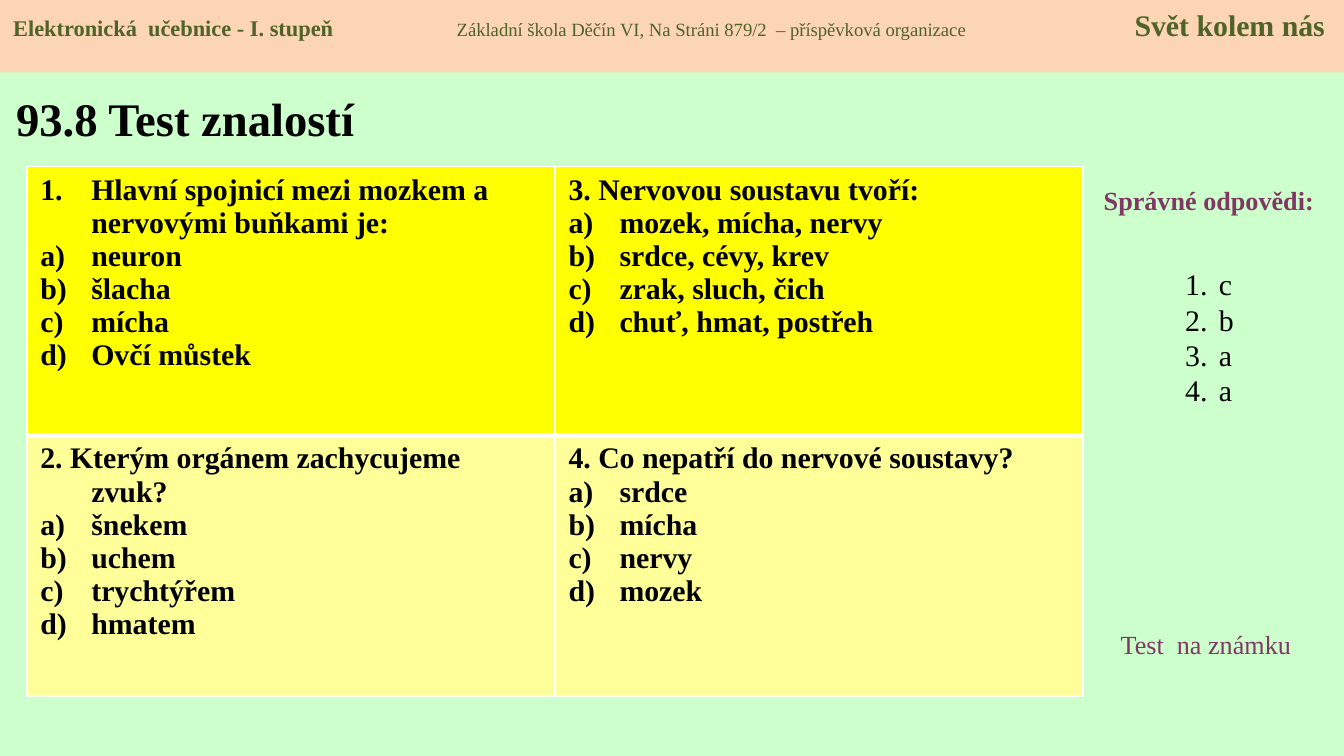
from lxml.etree import SubElement
from pptx import Presentation
from pptx.dml.color import RGBColor
from pptx.enum.shapes import MSO_SHAPE as Shape
from pptx.enum.text import MSO_ANCHOR as Anchor, MSO_AUTO_SIZE as AutoSize, PP_ALIGN as Align
from pptx.oxml.ns import qn
from pptx.util import Inches, Pt

COLORS = {
    "background": "CCFFCC", "banner": "FCD5B5", "green": "4F6228",
    "plum": "813763", "black": "000000", "border": "FFFFFF",
    "top_row": "FFFF00", "bottom_row": "FFFF99",
}


def add_run(paragraph, text, size, color, bold=False):
    run = paragraph.add_run()
    run.text = text
    run.font.name = "Times New Roman"
    run.font.size = Pt(size)
    run.font.bold = bold
    run.font.color.rgb = RGBColor.from_string(COLORS[color])


def indent(paragraph, hang, numbering=None):
    props = paragraph._p.get_or_add_pPr()
    props.set("marL", str(Inches(hang)))
    props.set("indent", str(-Inches(hang)))
    if numbering:
        SubElement(props, qn("a:buFont"), typeface="+mj-lt")
        SubElement(props, qn("a:buAutoNum"), type=numbering)


# 16:9 slide
prs = Presentation()
prs.slide_width, prs.slide_height = Inches(10), Inches(10 * 9 / 16)
slide = prs.slides.add_slide(prs.slide_layouts[5])
slide.background.fill.solid()
slide.background.fill.fore_color.rgb = RGBColor.from_string(COLORS["background"])

# Title
title = slide.shapes.title
title.left, title.top, title.width, title.height = map(Inches, (0.02, 0.55, 3.19, 0.65))
title.text_frame.vertical_anchor = Anchor.MIDDLE
title.text_frame.paragraphs[0].alignment = Align.LEFT
add_run(title.text_frame.paragraphs[0], "93.8 Test znalostí", 25, "black", True)

# Banner: three texts on one line, spaced with tab stops
banner = slide.shapes.add_shape(Shape.RECTANGLE, 0, 0, prs.slide_width, Inches(0.54))
banner.shadow.inherit = False
banner.fill.solid()
banner.fill.fore_color.rgb = RGBColor.from_string(COLORS["banner"])
banner.line.fill.background()
banner.text_frame.vertical_anchor = Anchor.TOP
banner_line = banner.text_frame.paragraphs[0]
banner_line.alignment = Align.LEFT
tab_stops = SubElement(banner_line._p.get_or_add_pPr(), qn("a:tabLst"))
for position, side in ((3.3, "l"), (9.76, "r")):
    SubElement(tab_stops, qn("a:tab"), pos=str(Inches(position)), algn=side)
add_run(banner_line, "Elektronická  učebnice - I. stupeň\t", 12, "green", True)
add_run(banner_line, "Základní škola Děčín VI, Na Stráni 879/2  – příspěvková organizace\t", 10, "green")
add_run(banner_line, "Svět kolem nás", 16, "green", True)

# Questions: (row, column, question, question numbering, hanging indent, options)
questions = [
    (0, 0, "Hlavní spojnicí mezi mozkem a nervovými buňkami je:", "arabicPeriod", 0.38,
     ["neuron", "šlacha", "mícha", "Ovčí můstek"]),
    (0, 1, "3. Nervovou soustavu tvoří:", None, 0.38,
     ["mozek, mícha, nervy", "srdce, cévy, krev", "zrak, sluch, čich", "chuť, hmat, postřeh"]),
    (1, 0, "2. Kterým orgánem zachycujeme zvuk?", None, 0.38,
     ["šnekem", "uchem", "trychtýřem", "hmatem"]),
    (1, 1, "4. Co nepatří do nervové soustavy?", None, 0,
     ["srdce", "mícha", "nervy", "mozek"]),
]
quiz = slide.shapes.add_table(2, 2, Inches(0.2), Inches(1.24), Inches(7.86), Inches(3.94)).table
quiz.rows[0].height, quiz.rows[1].height = Inches(2), Inches(1.94)
for row, column, question, numbering, hang, options in questions:
    cell = quiz.cell(row, column)

    # White borders, with a thicker line between the rows
    cell_props = cell._tc.get_or_add_tcPr()
    middle_edge = "lnB" if row == 0 else "lnT"
    for edge in ("lnL", "lnR", "lnT", "lnB"):
        border = SubElement(cell_props, qn(f"a:{edge}"), w=str(Pt(3 if edge == middle_edge else 1)))
        SubElement(SubElement(border, qn("a:solidFill")), qn("a:srgbClr"), val=COLORS["border"])
    cell.fill.solid()
    cell.fill.fore_color.rgb = RGBColor.from_string(COLORS["bottom_row" if row else "top_row"])

    heading = cell.text_frame.paragraphs[0]
    indent(heading, hang, numbering)
    add_run(heading, question, 16, "black", True)
    for option in options:
        choice = cell.text_frame.add_paragraph()
        indent(choice, 0.38, "alphaLcParenR")
        add_run(choice, option, 16, "black", True)

# Side notes
for place, text, bold, alignment in (
    ((8.05, 1.32, 1.89, 0.34), "Správné odpovědi:", True, Align.CENTER),
    ((8.24, 4.63, 1.57, 0.34), "Test  na známku", False, Align.LEFT),
):
    note = slide.shapes.add_textbox(*map(Inches, place)).text_frame
    note.word_wrap = True
    note.auto_size = AutoSize.SHAPE_TO_FIT_TEXT
    note.paragraphs[0].alignment = alignment
    add_run(note.paragraphs[0], text, 14, "plum", bold)

# Correct answers, set below the top of their box
answers = slide.shapes.add_textbox(Inches(8.72), Inches(1.65), Inches(0.55), Inches(1.99)).text_frame
answers.word_wrap = True
answers.margin_top = Inches(0.33)
for number, letter in enumerate("cbaa"):
    answer = answers.add_paragraph() if number else answers.paragraphs[0]
    answer.line_spacing = Pt(19)
    indent(answer, 0.25, "arabicPeriod")
    add_run(answer, letter, 16, "black")

prs.save("out.pptx")
